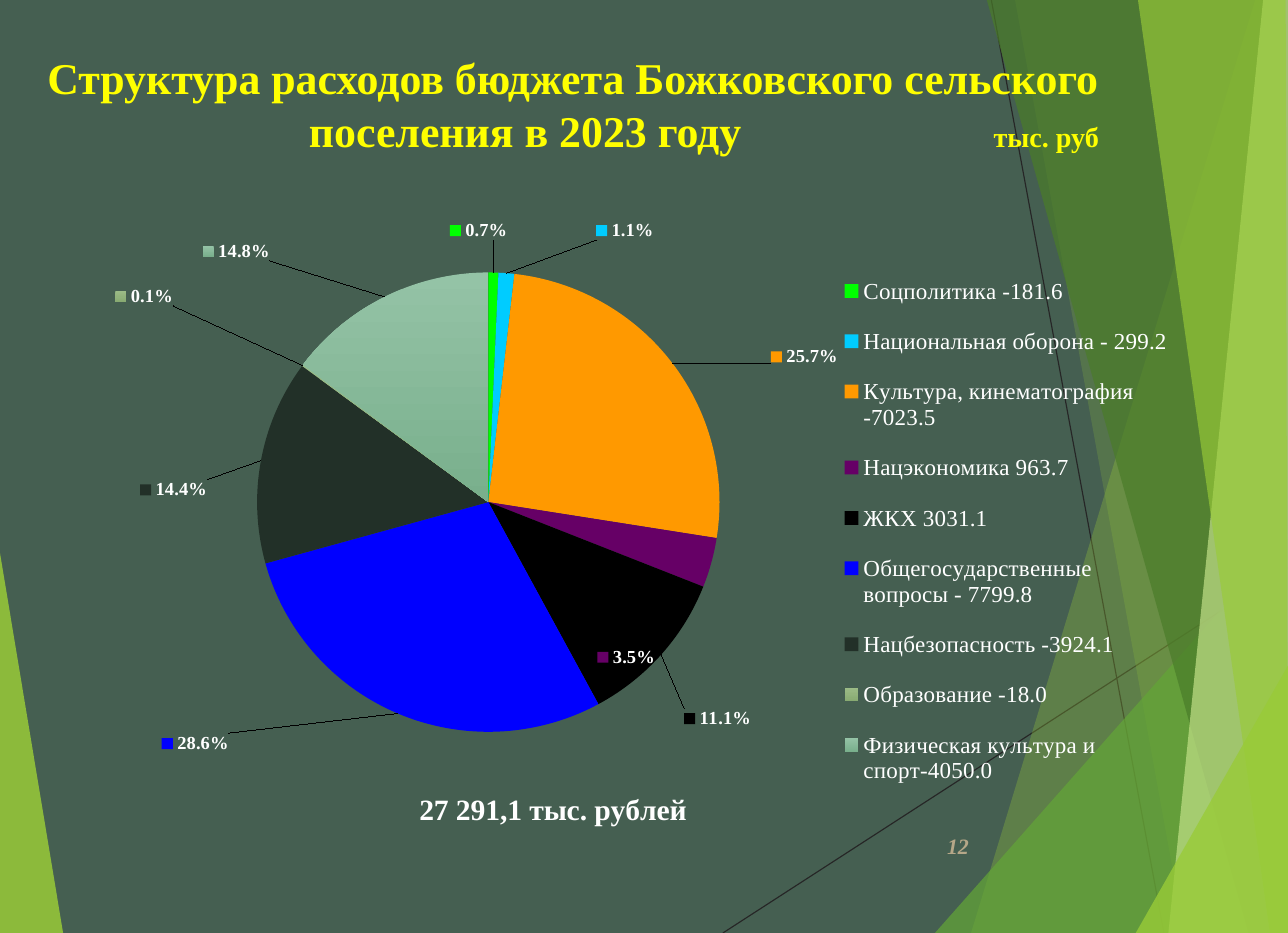
import math
from itertools import accumulate

from lxml import etree
from pptx import Presentation
from pptx import util as u
from pptx.chart.data import CategoryChartData
from pptx.dml.color import RGBColor
from pptx.enum import chart as ch, shapes, text
from pptx.oxml.ns import qn

PX = 9144  # EMU per px, 100 px to the inch
W, H = 1142, 827
FONT = "Times New Roman"
C = {
    "bg": "455F51", "line": "262626", "lime": "99CB38", "green": "63A537",
    "dark": "4A7C29", "pale": "C2E088", "yellow": "FFFF00", "white": "FFFFFF",
    "number": "B5A788",
}
# Facets from back to front: colour, opacity in percent, corners
FACETS = [
    ("lime", 85, [(0, 490), (56, H), (0, H)]),
    ("lime", 30, [(1113, 0), (861, H), (W, H), (W, 0)]),
    ("lime", 20, [(900, 0), (1050, H), (W, H), (W, 0)]),
    ("green", 72, [(829, H), (W, 473), (W, H)]),
    ("dark", 70, [(875, 0), (1107, H), (W, H), (W, 0)]),
    ("pale", 70, [(1120, 0), (1036, H), (W, H), (W, 0)]),
    ("lime", 65, [(1009, 0), (1126, H), (W, H), (1140, 0)]),
    ("lime", 80, [(1007, H), (W, 590), (W, H)]),
]
# Chart frame, pie centre and radius, size of a value label
CHART = (65, 183, 989, 557)
PIE_X, PIE_Y, PIE_R = 433, 447, 205
LABEL_W, LABEL_H = 58, 18
# Budget items: legend text, share, fill (two colours make a gradient), label centre
ITEMS = [
    ("Соцполитика -181.6", 0.007, ["00FF00"], (425, 210)),
    ("Национальная оборона - 299.2", 0.011, ["00CCFF"], (556, 210)),
    ("Культура, кинематография -7023.5", 0.257, ["FF9900"], (702, 324)),
    ("Нацэкономика 963.7", 0.035, ["660066"], (552, 577)),
    ("ЖКХ 3031.1", 0.111, ["000000"], (624, 633)),
    ("Общегосударственные вопросы - 7799.8", 0.286, ["0000FF"], (194, 656)),
    ("Нацбезопасность -3924.1", 0.144, ["223028"], (161, 444)),
    ("Образование -18.0", 0.001, ["9BBB86", "88AA72"], (135, 270)),
    ("Физическая культура и спорт-4050.0", 0.148, ["94C3A6", "79AF8C"], (229, 229)),
]


def rgb(value):
    return RGBColor.from_string(value)


def style(font, color, **fmt):
    for key, value in {"name": FONT, **fmt}.items():
        setattr(font, key, value)
    font.color.rgb = rgb(C[color])


def add_line(s, x1, y1, x2, y2):
    ln = s.shapes.add_connector(
        shapes.MSO_CONNECTOR.STRAIGHT, *(v * PX for v in (x1, y1, x2, y2)))
    ln.line.color.rgb = rgb(C["line"])
    ln.line.width = u.Pt(0.75)
    etree.SubElement(ln._element.spPr, qn("a:effectLst"))


def add_facet(s, color, opacity, corners):
    fb = s.shapes.build_freeform(*corners[0], scale=PX)
    fb.add_line_segments(corners[1:], close=True)
    sp = fb.convert_to_shape()
    sp.shadow.inherit = False
    sp.line.fill.background()
    sp.fill.solid()
    sp.fill.fore_color.rgb = rgb(C[color])
    clr = sp._element.spPr.find(qn("a:solidFill"))[0]
    etree.SubElement(clr, qn("a:alpha"), val=str(opacity * 1000))


def add_textbox(s, x, y, w, h, **fmt):
    tf = s.shapes.add_textbox(x * PX, y * PX, w * PX, h * PX).text_frame
    for key, value in {"word_wrap": True, **fmt}.items():
        setattr(tf, key, value)
    return tf


def add_run(p, words, color, **fmt):
    r = p.add_run()
    r.text = words
    style(r.font, color, **fmt)


def add_title(s):
    tf = add_textbox(s, 31, 39, 1094, 106, margin_top=6 * PX, margin_left=11 * PX)
    add_run(tf.paragraphs[0], "Структура расходов бюджета Божковского сельского",
            "yellow", size=u.Pt(28), bold=True)
    # Second line is set on two tab stops
    p = tf.add_paragraph()
    tabs = etree.SubElement(p._p.get_or_add_pPr(), qn("a:tabLst"))
    for pos in (232, 839):
        etree.SubElement(tabs, qn("a:tab"), pos=str(pos * PX), algn="l")
    add_run(p, "\tпоселения в 2023 году\t", "yellow", size=u.Pt(28), bold=True)
    add_run(p, "тыс. руб", "yellow", size=u.Pt(18), bold=True)


def set_layout(parent, index, **values):
    """Give a chart part a manual layout as its child number index."""
    for old in parent.findall(qn("c:layout")):
        parent.remove(old)
    layout = etree.Element(qn("c:layout"))
    manual = etree.SubElement(layout, qn("c:manualLayout"))
    for key, value in values.items():
        val = value if isinstance(value, str) else f"{value:.4f}"
        etree.SubElement(manual, qn("c:" + key), val=val)
    parent.insert(index, layout)


def in_chart(x, y, w, h):
    left, top, width, height = CHART
    return {"x": (x - left) / width, "y": (y - top) / height,
            "w": w / width, "h": h / height}


def fill_slice(fill, colors):
    if len(colors) == 1:
        fill.solid()
        fill.fore_color.rgb = rgb(colors[0])
        return
    fill.gradient()
    fill.gradient_angle = 270
    for stop, color in zip(fill.gradient_stops, colors):
        stop.color.rgb = rgb(color)


def place_label(label, middle, center):
    """Move a label from its outside-end spot to the given centre."""
    style(label.font, "white", size=u.Pt(11.8), bold=True)
    label.position = ch.XL_LABEL_POSITION.OUTSIDE_END
    angle = 2 * math.pi * middle
    x = PIE_X + (PIE_R + LABEL_W / 2) * math.sin(angle)
    y = PIE_Y - (PIE_R + LABEL_H / 2) * math.cos(angle)
    dLbl = label._get_or_add_dLbl()
    set_layout(dLbl, 1, x=(center[0] - x) / CHART[2], y=(center[1] - y) / CHART[3])
    dLbl.find(qn("c:showLegendKey")).set("val", "1")


def add_pie(s):
    names, shares, fills, centers = zip(*ITEMS)
    data = CategoryChartData(number_format="0.0%")
    data.categories = names
    data.add_series("Series 1", shares)
    chart = s.shapes.add_chart(
        ch.XL_CHART_TYPE.PIE, *(v * PX for v in CHART), data).chart
    style(chart.font, "white", size=u.Pt(18.9))
    plot = chart.plots[0]
    plot.vary_by_categories = True
    set_layout(chart._chartSpace.chart.plotArea, 0, layoutTarget="inner",
               xMode="edge", yMode="edge",
               **in_chart(PIE_X - PIE_R, PIE_Y - PIE_R, 2 * PIE_R, 2 * PIE_R))

    # Total under the pie
    p = chart.chart_title.text_frame.paragraphs[0]
    add_run(p, "27 291,1 тыс. рублей", "white", size=u.Pt(18.9), bold=True)
    spot = in_chart(367, 700, 0, 0)
    set_layout(chart.chart_title._element, 1, xMode="edge", yMode="edge",
               x=spot["x"], y=spot["y"])

    # Legend
    chart.has_legend = True
    chart.legend.position = ch.XL_LEGEND_POSITION.RIGHT
    chart.legend.include_in_layout = False
    style(chart.legend.font, "white", size=u.Pt(14.7))
    set_layout(chart.legend._element, 1, xMode="edge", yMode="edge",
               **in_chart(742, 225, 300, 495))

    # Slices and their labels
    ser = plot.series[0]
    labels = ser.data_labels
    for key, value in {"show_value": True, "number_format": "0.0%",
                       "number_format_is_linked": False,
                       "position": ch.XL_LABEL_POSITION.OUTSIDE_END}.items():
        setattr(labels, key, value)
    style(labels.font, "white", size=u.Pt(11.8), bold=True)
    for i, end in enumerate(accumulate(shares)):
        point = ser.points[i]
        fill_slice(point.format.fill, fills[i])
        point.format.line.fill.background()
        place_label(point.data_label, end - shares[i] / 2, centers[i])


def main():
    prs = Presentation()
    prs.slide_width, prs.slide_height = W * PX, H * PX
    s = prs.slides.add_slide(prs.slide_layouts[6])
    s.background.fill.solid()
    s.background.fill.fore_color.rgb = rgb(C["bg"])

    # Backdrop
    add_line(s, 641, H, W, 503)
    add_line(s, 879, 0, 1032, H)
    for facet in FACETS:
        add_facet(s, *facet)

    # Slide number
    tf = add_textbox(s, 805, 728, 64, 44, vertical_anchor=text.MSO_ANCHOR.MIDDLE)
    tf.paragraphs[0].alignment = text.PP_ALIGN.RIGHT
    add_run(tf.paragraphs[0], "12", "number", size=u.Pt(14), bold=True, italic=True)

    add_pie(s)
    add_title(s)
    prs.save("out.pptx")


if __name__ == "__main__":
    main()
